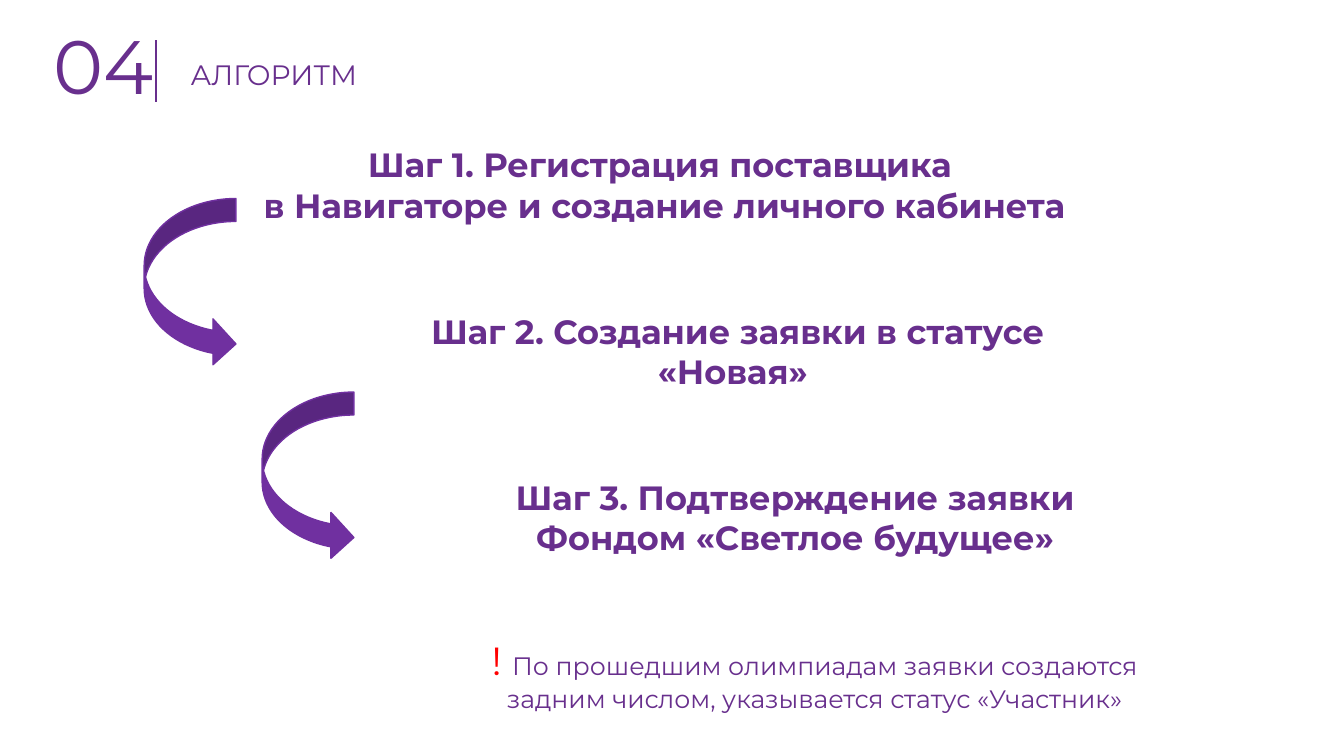
from dataclasses import dataclass

from lxml import etree
from pptx import Presentation
from pptx.dml.color import RGBColor
from pptx.enum.shapes import MSO_CONNECTOR, MSO_SHAPE
from pptx.enum.text import MSO_ANCHOR, MSO_AUTO_SIZE, PP_ALIGN
from pptx.oxml.ns import qn
from pptx.util import Inches, Pt

LEFT, CENTER = PP_ALIGN.LEFT, PP_ALIGN.CENTER
TOP, NO_FIT = MSO_ANCHOR.TOP, MSO_AUTO_SIZE.NONE
RECT, ARROW = MSO_SHAPE.RECTANGLE, MSO_SHAPE.CURVED_RIGHT_ARROW
STRAIGHT = MSO_CONNECTOR.STRAIGHT
FONT = "Montserrat"
PURPLE, VIOLET, RED, WHITE = "682F8D", "7030A0", "FF0000", "FFFFFF"


@dataclass
class Step:
    text: str
    left: float
    width: float


# Steps of the algorithm; "\v" is a line break
STEPS = [
    Step("Шаг 1. Регистрация поставщика \vв Навигаторе и создание личного кабинета", 2.54, 8.1),
    Step("Шаг 2. Создание заявки в статусе «Новая» ", 3.77, 7.09),
    Step("Шаг 3. Подтверждение заявки Фондом «Светлое будущее»", 4.91, 5.95),
]
STEP_TOP, STEP_GAP = 1.42, 1.65
ARROWS = [(1.43, 1.97), (2.6, 3.89)]


def color(code: str) -> RGBColor:
    return RGBColor.from_string(code)


def place(shape, left: float, top: float, width: float, height: float) -> None:
    shape.left, shape.top = Inches(left), Inches(top)
    shape.width, shape.height = Inches(width), Inches(height)


def style(shape, size: float, bold: bool = False, align=LEFT):
    """Format the text of a shape and return its paragraph."""
    frame = shape.text_frame
    frame.word_wrap, frame.auto_size = True, NO_FIT
    frame.vertical_anchor = TOP
    frame.margin_left = frame.margin_right = frame.margin_bottom = 0
    frame.margin_top = Inches(0.01)
    para = frame.paragraphs[0]
    para.alignment = align
    para.font.name, para.font.size, para.font.bold = FONT, Pt(size), bold
    para.font.color.rgb = color(PURPLE)
    return para


def add_block(slide, left: float, top: float, width: float, height: float):
    """Add a plain white rectangle for text."""
    block = slide.shapes.add_shape(RECT, 0, 0, 0, 0)
    place(block, left, top, width, height)
    block.shadow.inherit = False
    block.fill.solid()
    block.fill.fore_color.rgb = color(WHITE)
    block.line.fill.background()
    return block


def add_head(slide) -> None:
    title = slide.shapes.title
    place(title, 1.89, 0.51, 4.63, 0.37)
    title.text_frame.text = "АЛГОРИТМ"
    style(title, 20).line_spacing = 1.15

    number = slide.shapes.add_textbox(0, 0, 0, 0)
    place(number, 0.53, 0.18, 1.03, 0.92)
    number.text_frame.text = "04"
    style(number, 54)

    rule = slide.shapes.add_connector(
        STRAIGHT, Inches(1.55), Inches(0.4), Inches(1.55), Inches(1.01))
    rule.line.color.rgb = color(PURPLE)
    rule.line.width = Pt(1.42)
    etree.SubElement(rule._element.spPr, qn("a:effectLst"))


def add_step(slide, step: Step, top: float) -> None:
    block = add_block(slide, step.left, top, step.width, 0.82)
    block.text_frame.text = step.text
    style(block, 24, True, CENTER)


def add_arrow(slide, left: float, top: float) -> None:
    arrow = slide.shapes.add_shape(ARROW, 0, 0, 0, 0)
    place(arrow, left, top, 0.91, 1.67)
    arrow.shadow.inherit = False
    arrow.fill.solid()
    arrow.fill.fore_color.rgb = color(VIOLET)
    arrow.line.color.rgb = color(VIOLET)
    arrow.line.width = Pt(1)


def add_note(slide) -> None:
    block = add_block(slide, 4.46, 6.3, 7.24, 0.78)
    para = style(block, 18, align=CENTER)
    mark = para.add_run()
    mark.text = "! "
    mark.font.size = Pt(28)
    mark.font.color.rgb = color(RED)
    para.add_run().text = ("По прошедшим олимпиадам заявки создаются "
                           "задним числом, указывается статус «Участник»")


def main() -> None:
    deck = Presentation()
    deck.slide_width, deck.slide_height = Inches(13.33), Inches(7.5)
    slide = deck.slides.add_slide(deck.slide_layouts[5])
    add_head(slide)
    for i, step in enumerate(STEPS):
        add_step(slide, step, STEP_TOP + i * STEP_GAP)
    for left, top in ARROWS:
        add_arrow(slide, left, top)
    add_note(slide)
    deck.save("out.pptx")


if __name__ == "__main__":
    main()
